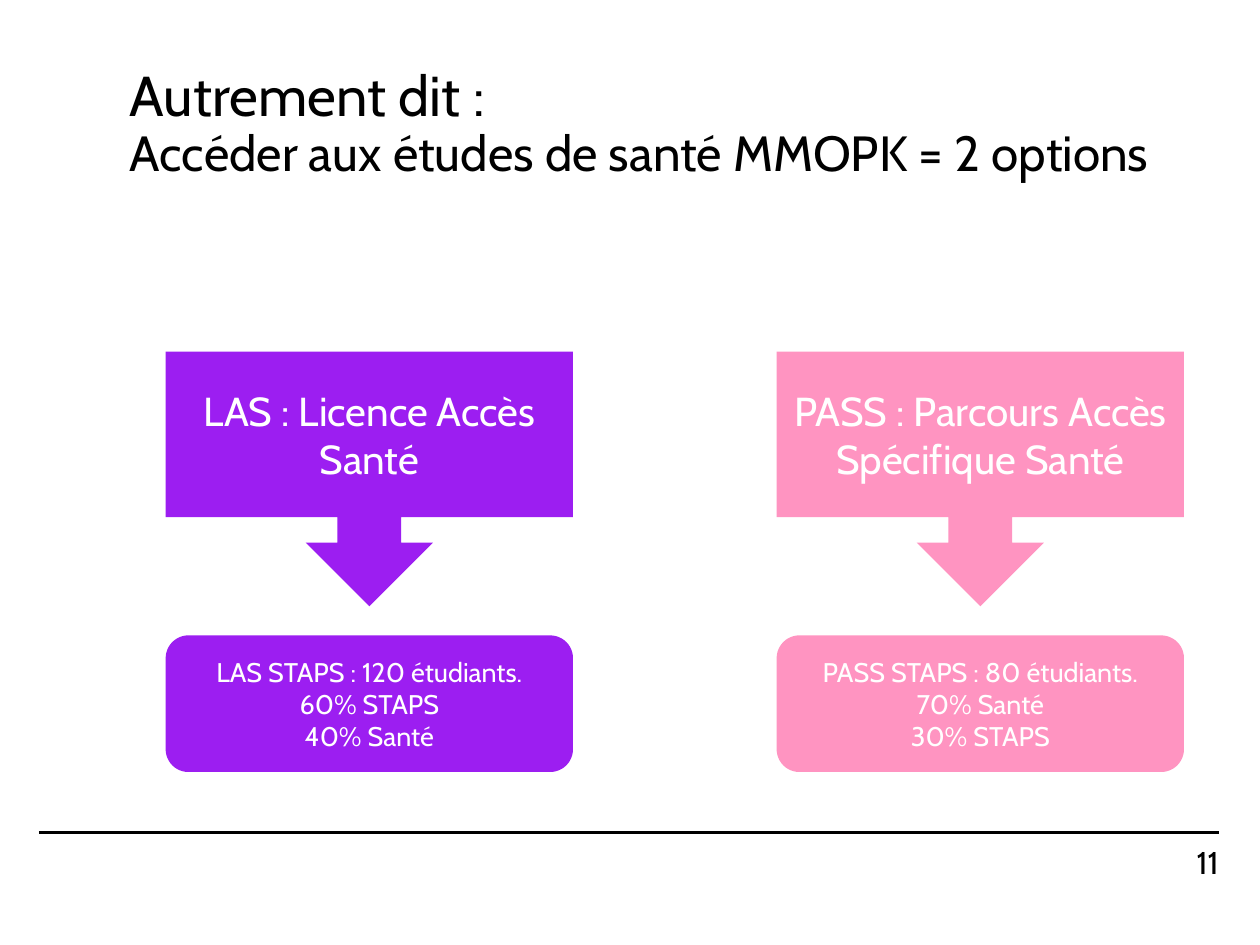
from lxml import etree
from pptx import Presentation
from pptx.dml.color import RGBColor
from pptx.enum.shapes import MSO_CONNECTOR, MSO_SHAPE
from pptx.enum.text import MSO_ANCHOR, PP_ALIGN
from pptx.oxml.ns import qn
from pptx.util import Pt

PX = 9144
FONT = "Cabin"
BLACK = RGBColor(0x00, 0x00, 0x00)
WHITE = RGBColor(0xFF, 0xFF, 0xFF)
PURPLE = RGBColor(0x9C, 0x1E, 0xF1)
PINK = RGBColor(0xFF, 0x94, 0xC1)
LEFT, CENTER, RIGHT = PP_ALIGN.LEFT, PP_ALIGN.CENTER, PP_ALIGN.RIGHT
MIDDLE = MSO_ANCHOR.MIDDLE
CALLOUT = MSO_SHAPE.DOWN_ARROW_CALLOUT
ROUNDED = MSO_SHAPE.ROUNDED_RECTANGLE
STRAIGHT = MSO_CONNECTOR.STRAIGHT

OPTIONS = [
    (PURPLE, "LAS : Licence Accès Santé",
     ["LAS STAPS : 120 étudiants.", "60% STAPS", "40% Santé"]),
    (PINK, "PASS : Parcours Accès Spécifique Santé",
     ["PASS STAPS : 80 étudiants.", "70% Santé", "30% STAPS"]),
]


def scale(*lengths):
    """Turn px lengths into EMU."""
    return [length * PX for length in lengths]


def write(frame, lines, color, align, spacing=1.0):
    """Fill a text frame with one paragraph per (text, size) line."""
    frame.word_wrap = True
    frame.vertical_anchor = MIDDLE
    for index, (text, size) in enumerate(lines):
        para = frame.add_paragraph() if index else frame.paragraphs[0]
        para.alignment = align
        para.line_spacing = spacing
        span = para.add_run()
        span.text = text
        span.font.name = FONT
        span.font.size = Pt(size)
        span.font.color.rgb = color


def add_panel(page, kind, box, fill, lines):
    """Add a filled shape with centred white text."""
    panel = page.shapes.add_shape(kind, *scale(*box))
    panel.shadow.inherit = False
    panel.fill.solid()
    panel.fill.fore_color.rgb = fill
    panel.line.fill.background()
    write(panel.text_frame, lines, WHITE, CENTER)


def add_title(page, box):
    """Add the two-line heading."""
    title = page.shapes.add_textbox(*scale(*box))
    lines = [("Autrement dit :", 50),
             ("Accéder aux études de santé MMOPK = 2 options", 44)]
    write(title.text_frame, lines, BLACK, LEFT, 0.9)


def add_option(page, box, fill, name, details):
    """Add an arrow callout above its rounded detail panel."""
    left, top, width, height = box
    callout_height, detail_height = 315, 169
    add_panel(page, CALLOUT, (left, top, width, callout_height), fill, [(name, 36)])
    detail_top = top + height - detail_height
    add_panel(page, ROUNDED, (left, detail_top, width, detail_height), fill,
              [(detail, 24) for detail in details])


def add_footer(page, box, number):
    """Add the rule and the page number below its right end."""
    left, top, width, height = box
    rule = page.shapes.add_connector(STRAIGHT, *scale(left, top, left + width, top))
    rule.line.color.rgb = BLACK
    rule.line.width = Pt(2)
    etree.SubElement(rule.line._get_or_add_ln().getparent(), qn("a:effectLst"))
    number_width, number_height = 229, 47
    number_box = page.shapes.add_textbox(*scale(
        left + width - number_width, top + height - number_height,
        number_width, number_height))
    frame = number_box.text_frame
    frame.margin_left = frame.margin_right = frame.margin_top = frame.margin_bottom = 0
    write(frame, [(number, 28)], BLACK, RIGHT)


def main():
    """Build and save the slide."""
    deck = Presentation()
    deck.slide_width, deck.slide_height = scale(1559, 1169)
    page = deck.slides.add_slide(deck.slide_layouts[6])
    add_title(page, (151, 57, 1373, 195))
    for column, (fill, name, details) in enumerate(OPTIONS):
        add_option(page, (205 + column * 756, 435, 504, 520), fill, name, details)
    add_footer(page, (48, 1030, 1460, 60), "11")
    deck.save("out.pptx")


if __name__ == "__main__":
    main()
